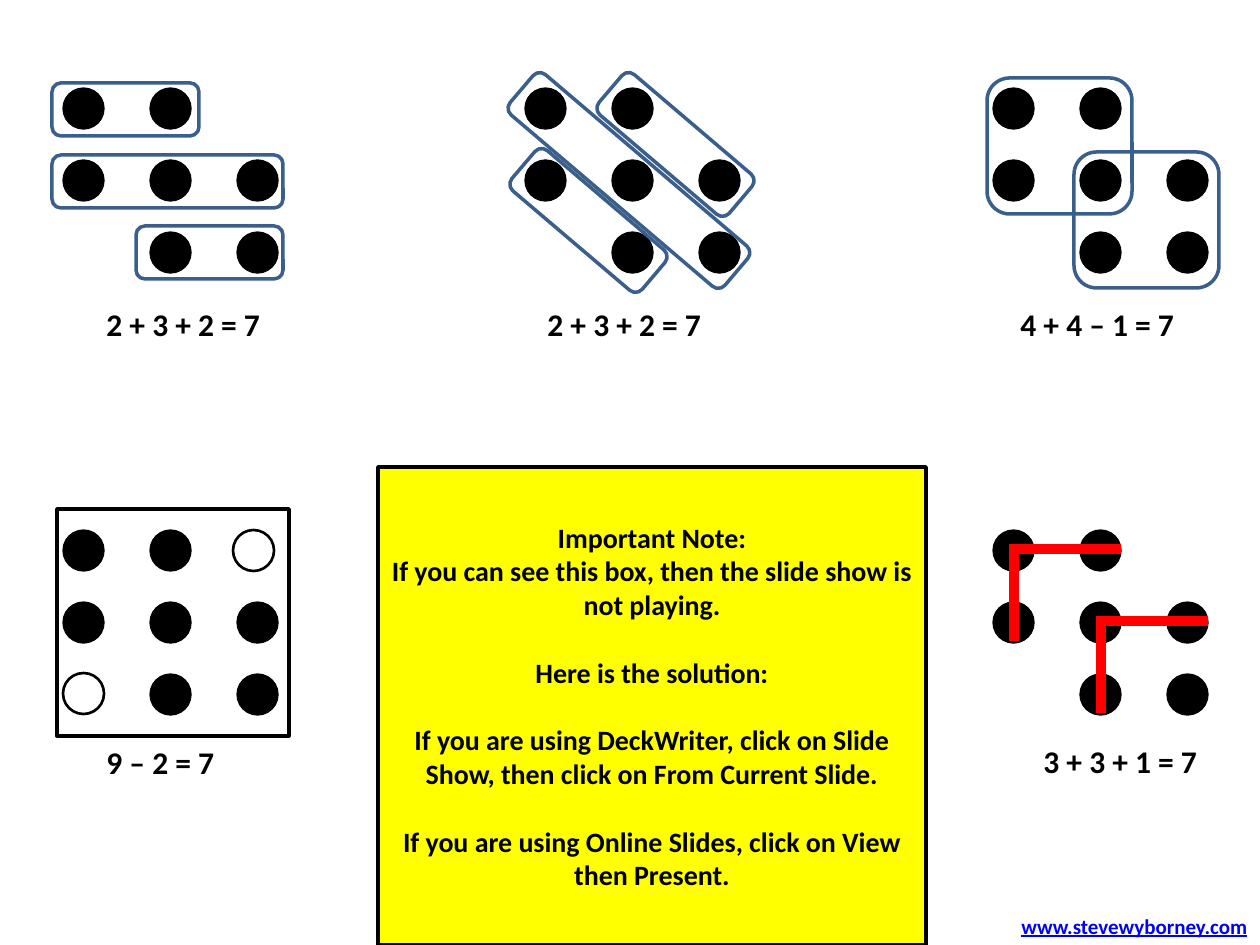
from typing import NamedTuple

from lxml.etree import SubElement
from pptx import Presentation
from pptx.dml.color import RGBColor
from pptx.enum.shapes import MSO_CONNECTOR as Connector, MSO_SHAPE as Shape
from pptx.enum.text import MSO_ANCHOR as Anchor, MSO_AUTO_SIZE as AutoSize, PP_ALIGN as Align
from pptx.oxml.ns import qn
from pptx.util import Emu, Pt

BLACK = RGBColor(0, 0, 0)
BLUE = RGBColor(0x3A, 0x5F, 0x8C)
RED = RGBColor(0xFF, 0, 0)
YELLOW = RGBColor(0xFF, 0xFF, 0)
LINK_BLUE = RGBColor(0, 0, 0xFF)

PX_PER_INCH = 126
DOT = 41
COLUMN_STEP, ROW_STEP = 87, 72
SEVEN_DOTS = ("XX.", "XXX", ".XX")

TITLE_FORMAT = {"name": "Calibri", "size": Pt(18), "bold": True}
NOTE_FORMAT = TITLE_FORMAT | {"size": Pt(16)}
LINK_FORMAT = TITLE_FORMAT | {"size": Pt(12), "underline": True}


class Box(NamedTuple):
    left: int
    top: int
    width: int
    height: int
    angle: float = 0


class Equation(NamedTuple):
    text: str
    box: Box


DOT_ORIGINS = [(63, 88), (525, 88), (993, 88), (993, 530), (63, 530)]
MISSING_DOTS = [Box(233, 530, DOT, DOT), Box(63, 673, DOT, DOT)]
SUBSETS = [
    Box(52, 83, 147, 53), Box(52, 155, 231, 53), Box(136, 226, 147, 53),
    Box(590, 118, 171, 53, 40.4), Box(488, 154, 282, 53, 40.4),
    Box(503, 194, 171, 53, 40.4),
    Box(987, 78, 145, 136), Box(1074, 152, 145, 136),
]
EQUATIONS = [
    Equation("2 + 3 + 2 = 7", Box(94, 299, 181, 50)),
    Equation("2 + 3 + 2 = 7", Box(535, 299, 181, 50)),
    Equation("4 + 4 – 1 = 7", Box(1008, 299, 181, 50)),
    Equation("9 – 2 = 7", Box(94, 737, 135, 50)),
    Equation("3 + 3 + 1 = 7", Box(1031, 736, 181, 50)),
]
# Each note line with its space before, in points
NOTE_LINES = [
    ("Important Note:", 0),
    ("If you can see this box, then the slide show is not playing.", 0),
    ("Here is the solution:", 19.5),
    ("If you are using DeckWriter, click on Slide Show, then click on From Current Slide.", 19.5),
    ("If you are using Online Slides, click on View then Present.", 19.5),
]


def px(value: int) -> Emu:
    return Emu(round(value * 914400 / PX_PER_INCH))


def draw_shape(shapes, kind: Shape, box: Box, line: RGBColor, weight: float,
               fill: RGBColor | None = None):
    shape = shapes.add_shape(kind, *map(px, box[:4]))
    shape.rotation = box.angle
    shape.shadow.inherit = False
    if fill is None:
        shape.fill.background()
    else:
        shape.fill.solid()
        shape.fill.fore_color.rgb = fill
    shape.line.color.rgb = line
    shape.line.width = Pt(weight)
    return shape


def draw_dots(slide, left: int, top: int) -> None:
    dots = slide.shapes.add_group_shape().shapes
    for row, cells in enumerate(SEVEN_DOTS):
        for column, cell in enumerate(cells):
            if cell == "X":
                box = Box(left + column * COLUMN_STEP, top + row * ROW_STEP, DOT, DOT)
                draw_shape(dots, Shape.OVAL, box, BLACK, 0.75, BLACK)


def draw_elbow(slide, left: int, top: int) -> None:
    arms = slide.shapes.add_group_shape().shapes
    for ends in [(left + 5, top, left + 107, top), (left, top + 92, left, top - 5)]:
        arm = arms.add_connector(Connector.STRAIGHT, *map(px, ends))
        arm.line.color.rgb = RED
        arm.line.width = Pt(6)
        SubElement(arm._element.spPr, qn("a:effectLst"))


def write(paragraph, text: str, font_format: dict, color: RGBColor, align: Align) -> None:
    run = paragraph.add_run()
    run.text = text
    paragraph.alignment = align
    for attribute, value in font_format.items():
        setattr(run.font, attribute, value)
    run.font.color.rgb = color


def draw_label(slide, text: str, box: Box, font_format: dict, color: RGBColor = BLACK,
               align: Align = Align.LEFT) -> None:
    frame = slide.shapes.add_textbox(*map(px, box[:4])).text_frame
    frame.word_wrap = False
    frame.auto_size = AutoSize.SHAPE_TO_FIT_TEXT
    write(frame.paragraphs[0], text, font_format, color, align)


def draw_note(slide) -> None:
    note = draw_shape(slide.shapes, Shape.RECTANGLE, Box(378, 467, 548, 478), BLACK, 2, YELLOW)
    frame = note.text_frame
    frame.word_wrap = True
    frame.vertical_anchor = Anchor.MIDDLE
    for index, (text, gap) in enumerate(NOTE_LINES):
        paragraph = frame.add_paragraph() if index else frame.paragraphs[0]
        if gap:
            paragraph.space_before = Pt(gap)
        write(paragraph, text, NOTE_FORMAT, BLACK, Align.CENTER)


def main() -> None:
    deck = Presentation()
    deck.slide_width, deck.slide_height = px(1260), px(945)
    slide = deck.slides.add_slide(deck.slide_layouts[6])

    # Dot patterns, with the full square of nine framed
    draw_shape(slide.shapes, Shape.RECTANGLE, Box(57, 509, 232, 227), BLACK, 2)
    for left, top in DOT_ORIGINS:
        draw_dots(slide, left, top)
    for box in MISSING_DOTS:
        draw_shape(slide.shapes, Shape.OVAL, box, BLACK, 1.5)

    # Ways of grouping the dots
    for box in SUBSETS:
        draw_shape(slide.shapes, Shape.ROUNDED_RECTANGLE, box, BLUE, 2)
    for step in range(2):
        draw_elbow(slide, 1014 + step * COLUMN_STEP, 549 + step * ROW_STEP)

    # Equations, web address and note
    for equation in EQUATIONS:
        draw_label(slide, equation.text, equation.box, TITLE_FORMAT)
    draw_label(slide, "www.stevewyborney.com", Box(1005, 907, 255, 38), LINK_FORMAT,
               LINK_BLUE, Align.RIGHT)
    draw_note(slide)

    deck.save("out.pptx")


if __name__ == "__main__":
    main()
